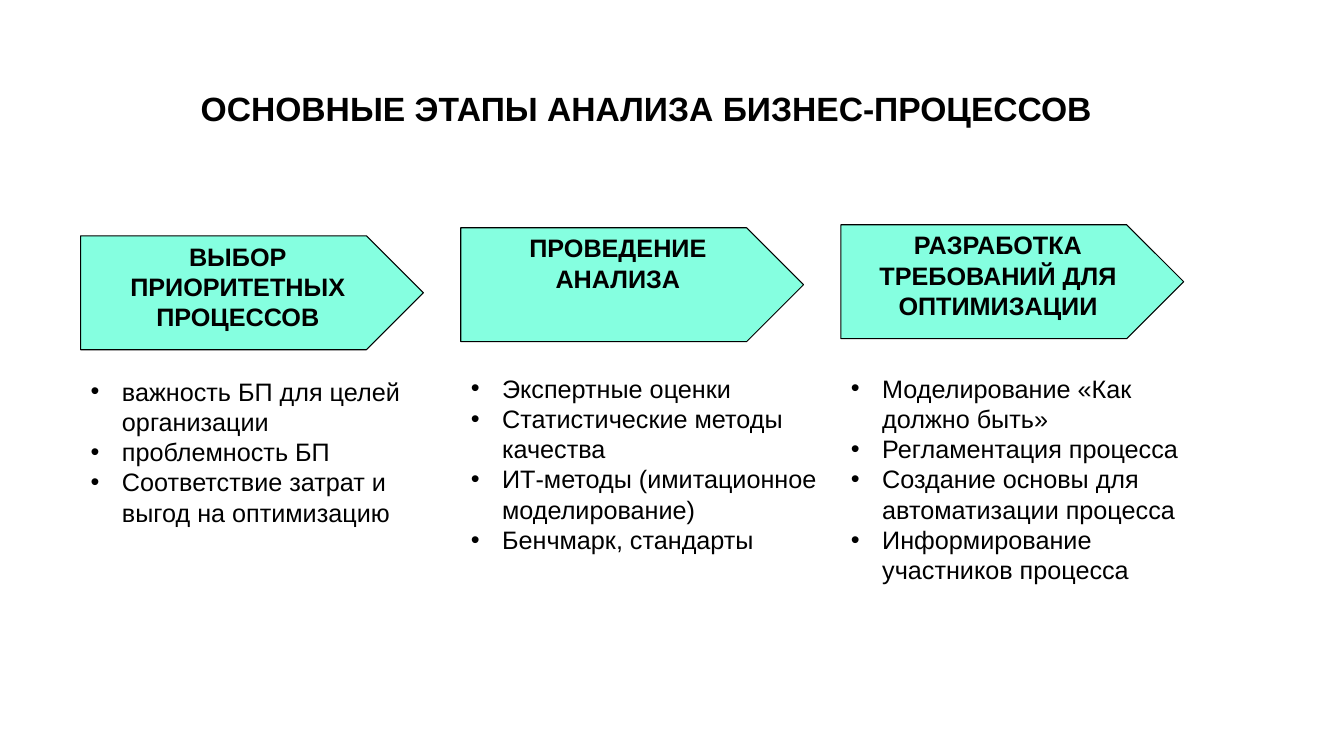
"""Builds a slide with three stages of business process analysis."""
from lxml import etree
from pptx import Presentation
from pptx.dml.color import RGBColor
from pptx.enum.shapes import MSO_SHAPE
from pptx.enum.text import MSO_ANCHOR, MSO_AUTO_SIZE, PP_ALIGN
from pptx.oxml.ns import qn
from pptx.util import Inches, Pt

PENTAGON = MSO_SHAPE.PENTAGON
TOP = MSO_ANCHOR.TOP
NO_FIT = MSO_AUTO_SIZE.NONE
LEFT, CENTER = PP_ALIGN.LEFT, PP_ALIGN.CENTER
COLORS = {"text": "000000", "arrow": "85FFE0", "line": "000000"}

COL_LEFT, COL_WIDTH = 0.8, 3.77
ARROW_WIDTH, ARROW_HEIGHT = 3.4, 1.13
INDENT = Inches(0.31)

STAGES = [
    ("ВЫБОР ПРИОРИТЕТНЫХ ПРОЦЕССОВ", 2.34, 3.68, 1.62,
     ["важность БП для целей организации",
      "проблемность БП",
      "Соответствие затрат и выгод на оптимизацию"]),
    ("ПРОВЕДЕНИЕ АНАЛИЗА", 2.26, 3.65, 1.92,
     ["Экспертные оценки",
      "Статистические методы качества",
      "ИТ-методы (имитационное моделирование)",
      "Бенчмарк, стандарты"]),
    ("РАЗРАБОТКА ТРЕБОВАНИЙ ДЛЯ ОПТИМИЗАЦИИ", 2.23, 3.65, 2.22,
     ["Моделирование «Как должно быть»",
      "Регламентация процесса",
      "Создание основы для автоматизации процесса",
      "Информирование участников процесса"]),
]


def place(sp, left, top, width, height):
    sp.left, sp.top = Inches(left), Inches(top)
    sp.width, sp.height = Inches(width), Inches(height)
    sp.text_frame.auto_size = NO_FIT
    sp.text_frame.vertical_anchor = TOP


def style(p, size, bold, align):
    p.alignment = align
    p.space_before = Pt(0)
    for r in p.runs:
        r.font.name = "Arial"
        r.font.size = Pt(size)
        r.font.bold = bold
        r.font.color.rgb = RGBColor.from_string(COLORS["text"])


prs = Presentation()
prs.slide_width, prs.slide_height = Inches(13.33), Inches(7.5)
s = prs.slides.add_slide(prs.slide_layouts.get_by_name("Comparison"))

title = s.shapes.title
place(title, 1.89, 0.82, 9.13, 0.5)
title.text_frame.text = "ОСНОВНЫЕ ЭТАПЫ АНАЛИЗА БИЗНЕС-ПРОЦЕССОВ"
title.text_frame.word_wrap = False
style(title.text_frame.paragraphs[0], 24, True, LEFT)

bodies = [sp for sp in s.placeholders if sp.placeholder_format.idx in (1, 2, 4)]
for sp in list(s.placeholders):
    if sp.placeholder_format.idx == 3:
        sp.element.getparent().remove(sp.element)

for i, (name, arrow_top, list_top, list_height, items) in enumerate(STAGES):
    left = COL_LEFT + i * COL_WIDTH

    arrow = s.shapes.add_shape(PENTAGON, 0, 0, 0, 0)
    place(arrow, left, arrow_top, ARROW_WIDTH, ARROW_HEIGHT)
    arrow.shadow.inherit = False
    arrow.fill.solid()
    arrow.fill.fore_color.rgb = RGBColor.from_string(COLORS["arrow"])
    arrow.line.color.rgb = RGBColor.from_string(COLORS["line"])
    arrow.line.width = Pt(0.75)
    arrow.text_frame.text = name
    style(arrow.text_frame.paragraphs[0], 18, True, CENTER)

    place(bodies[i], left, list_top, COL_WIDTH, list_height)
    tf = bodies[i].text_frame
    tf.text = "\n".join(items)
    for p in tf.paragraphs:
        pPr = p._p.get_or_add_pPr()
        pPr.set("marL", str(INDENT))
        pPr.set("indent", str(-INDENT))
        etree.SubElement(pPr, qn("a:buFont"), typeface="Arial")
        etree.SubElement(pPr, qn("a:buChar"), char="•")
        style(p, 18, False, LEFT)

prs.save("out.pptx")
